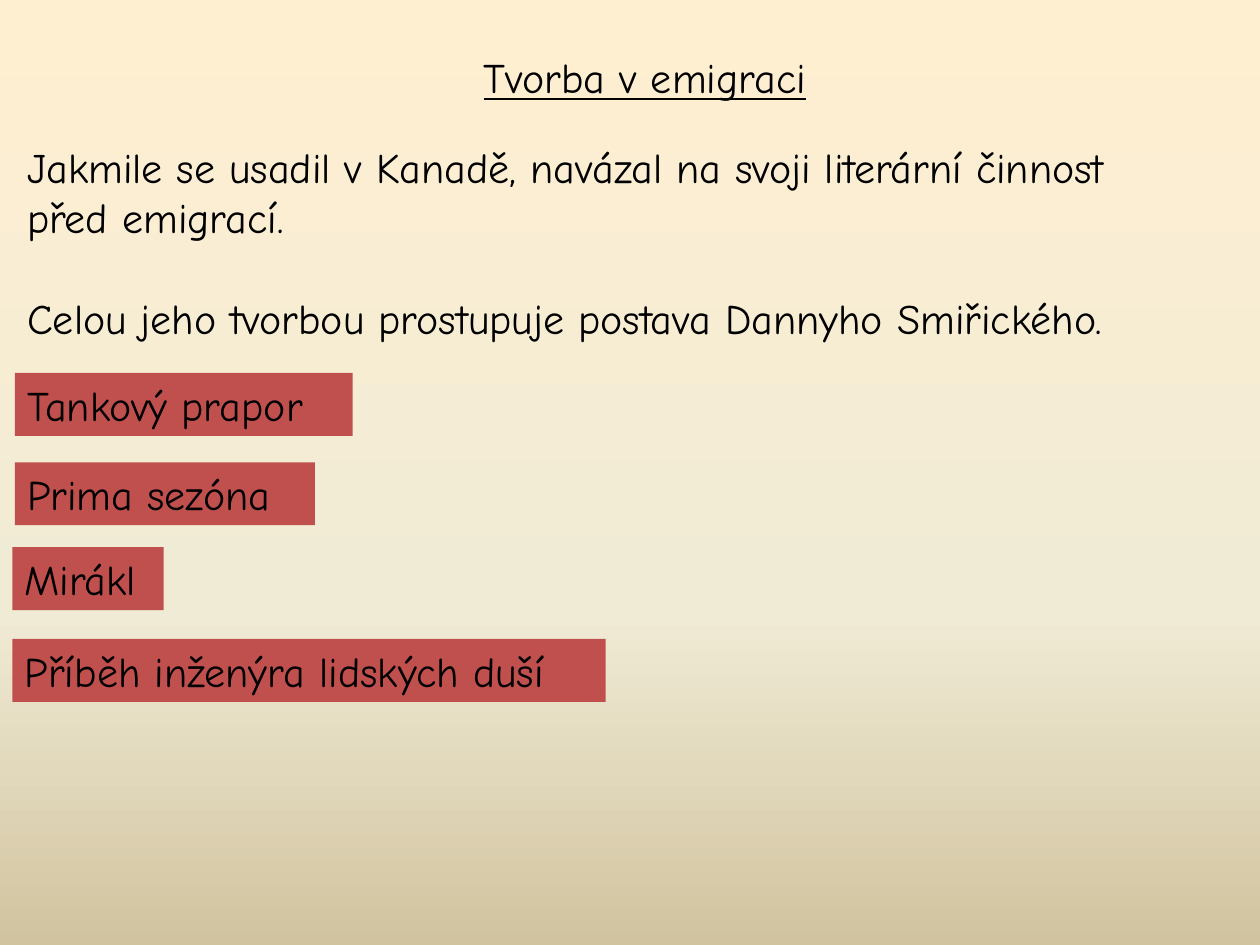
from copy import deepcopy

from pptx import Presentation
from pptx.dml.color import RGBColor
from pptx.enum.shapes import MSO_SHAPE as Shape
from pptx.enum.text import MSO_ANCHOR as Anchor, MSO_AUTO_SIZE as AutoSize, PP_ALIGN as Align
from pptx.oxml.ns import qn
from pptx.util import Cm, Pt

BLACK = RGBColor(0x00, 0x00, 0x00)
RED = RGBColor(0xC0, 0x50, 0x4D)
CREAM = RGBColor(0xFF, 0xEF, 0xD1)
IVORY = RGBColor(0xF0, 0xEB, 0xD5)
SAND = RGBColor(0xD1, 0xC3, 0x9F)

FONT = {"name": "Comic Neue", "size": Pt(24)}
LINE_HEIGHT = 1.27
BACKGROUND = [(0, CREAM), (0.65, IVORY), (1, SAND)]
INTRO = [
    (0, 0, 24.59, 2.31, ["Jakmile se usadil v Kanadě, navázal na svoji literární činnost",
                         "před emigrací."]),
    (0, 3.05, 24.31, LINE_HEIGHT, ["Celou jeho tvorbou prostupuje postava Dannyho Smiřického."]),
]
BOOKS = [
    (0.05, 0, 6.81, True, "Tankový prapor"),
    (0.05, 1.8, 6.05, True, "Prima sezóna"),
    (0, 3.51, 3.05, False, "Mirákl"),
    (0, 5.36, 11.96, False, "Příběh inženýra lidských duší"),
]


def paint_background(page):
    """Fill the page with a vertical gradient of three colours."""
    fill = page.background.fill
    fill.gradient()
    fill.gradient_angle = 270
    first = next(page._element.iter(qn("a:gs")))
    first.addnext(deepcopy(first))
    for stop, (position, color) in zip(fill.gradient_stops, BACKGROUND):
        stop.position = position
        stop.color.rgb = color


def write_text(box, lines, wrap=False, underline=None):
    """Write one left-aligned paragraph per line into the box."""
    frame = box.text_frame
    frame.text = "\n".join(lines)
    layout = {"word_wrap": wrap, "auto_size": AutoSize.SHAPE_TO_FIT_TEXT,
              "vertical_anchor": Anchor.TOP}
    for name, value in layout.items():
        setattr(frame, name, value)
    for para in frame.paragraphs:
        para.alignment = Align.LEFT
        for span in para.runs:
            for name, value in {**FONT, "underline": underline}.items():
                setattr(span.font, name, value)
            span.font.color.rgb = BLACK


def add_title(page, left, top, width):
    """Place the underlined title."""
    box = page.shapes.add_textbox(Cm(left), Cm(top), Cm(width), Cm(LINE_HEIGHT))
    write_text(box, ["Tvorba v emigraci"], underline=True)


def add_intro(page, left, top):
    """Place the introductory sentences."""
    for dx, dy, width, height, lines in INTRO:
        box = page.shapes.add_textbox(Cm(left + dx), Cm(top + dy), Cm(width), Cm(height))
        write_text(box, lines)


def add_books(page, left, top):
    """Place the book titles on red bars."""
    for dx, dy, width, wrap, title in BOOKS:
        bar = page.shapes.add_shape(Shape.RECTANGLE, Cm(left + dx), Cm(top + dy),
                                    Cm(width), Cm(LINE_HEIGHT))
        bar.shadow.inherit = False
        bar.fill.solid()
        bar.fill.fore_color.rgb = RED
        bar.line.fill.background()
        write_text(bar, [title], wrap)


def main():
    """Build the deck and save it."""
    deck = Presentation()
    deck.slide_width, deck.slide_height = Cm(25.4), Cm(19.05)
    page = deck.slides.add_slide(deck.slide_layouts[6])
    paint_background(page)
    add_title(page, 9.5, 0.91, 7.59)
    add_intro(page, 0.3, 2.72)
    add_books(page, 0.25, 7.52)
    deck.save("out.pptx")


if __name__ == "__main__":
    main()
